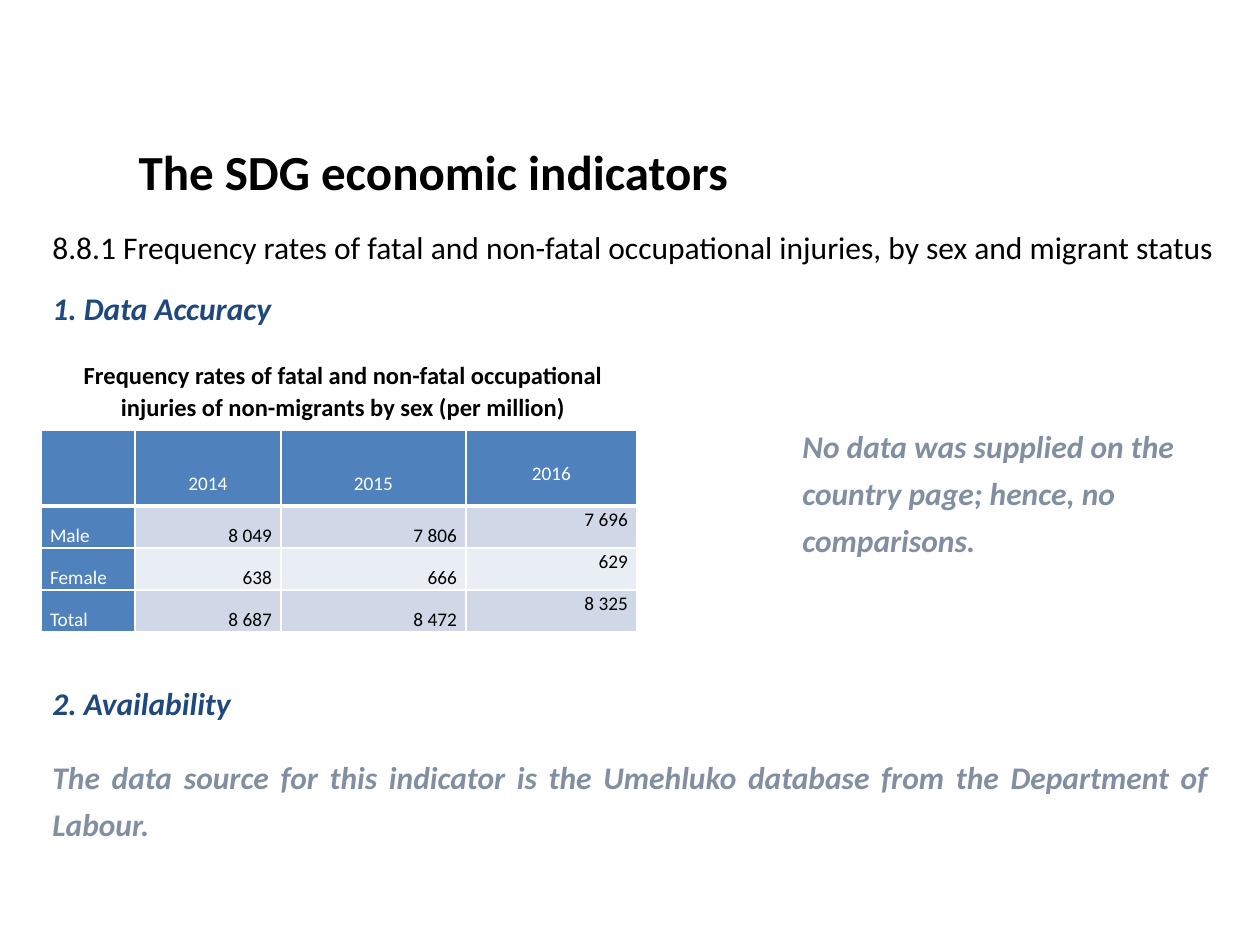
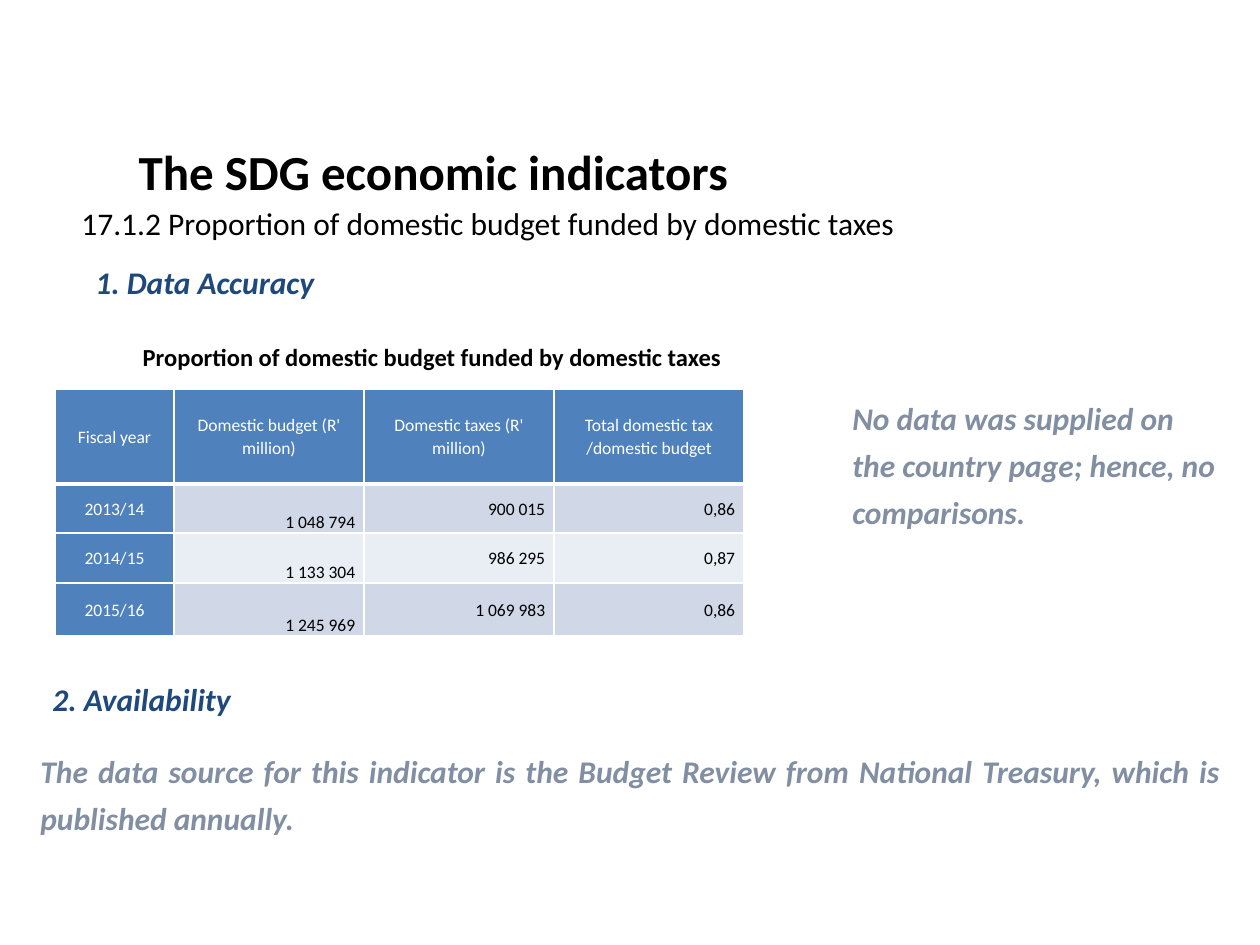
from dataclasses import dataclass

from lxml.etree import SubElement
from pptx import Presentation
from pptx.dml.color import RGBColor
from pptx.enum.text import MSO_ANCHOR, MSO_AUTO_SIZE, PP_ALIGN
from pptx.oxml.ns import qn
from pptx.util import Emu, Pt

PX = 914400 / 126


def px(length):
    """Turn whole pixels into EMU."""
    return Emu(round(length * PX))


@dataclass(frozen=True)
class TextStyle:
    """Look of one kind of text."""
    size: int
    color: str
    bold: bool = False
    italic: bool = False
    align: PP_ALIGN = PP_ALIGN.LEFT
    spacing: float = 1.0
    after: int = 0


class Theme:
    """Colours and type sizes shared by all slides."""
    font = "Calibri"
    black, white, navy, grey = "000000", "FFFFFF", "1F497D", "828FA3"
    header, bands = "4F81BD", ("D0D8E8", "E9EDF4")
    title = TextStyle(28, black, bold=True)
    indicator = TextStyle(18, black)
    heading = TextStyle(18, navy, bold=True, italic=True)
    remark = TextStyle(18, grey, bold=True, italic=True, spacing=1.25, after=12)
    source = TextStyle(18, grey, True, True, PP_ALIGN.JUSTIFY, 1.25, 12)
    caption = TextStyle(14, black, bold=True, align=PP_ALIGN.CENTER, spacing=1.07, after=8)


@dataclass(frozen=True)
class Column:
    """Width and text placement of one table column."""
    width: int
    align: PP_ALIGN = PP_ALIGN.RIGHT
    anchor: MSO_ANCHOR = MSO_ANCHOR.BOTTOM
    header_lift: int = 0


class IndicatorDeck:
    """Holds the theme and the current slide and draws each kind of element."""

    def __init__(self, theme):
        self.theme = theme
        self.deck = Presentation()
        self.deck.slide_width, self.deck.slide_height = px(1260), px(945)
        self.page = None

    def add_page(self, title):
        """Start a slide with the shared title."""
        self.page = self.deck.slides.add_slide(self.deck.slide_layouts[5])
        box = self.page.shapes.title
        box.left, box.top, box.width, box.height = map(px, (126, 135, 621, 72))
        self.fill_frame(box.text_frame, title, self.theme.title, wrap=False)

    def fill_frame(self, frame, text, style, wrap=True):
        """Fill a text frame with one styled paragraph."""
        frame.word_wrap = wrap
        frame.auto_size = MSO_AUTO_SIZE.SHAPE_TO_FIT_TEXT
        frame.vertical_anchor = MSO_ANCHOR.TOP
        self.add_span(frame.paragraphs[0], text, style)

    def add_span(self, para, text, style):
        """Format a paragraph and add its run."""
        para.alignment = style.align
        para.line_spacing = style.spacing
        para.space_before, para.space_after = Pt(0), Pt(style.after)
        span = para.add_run()
        span.text = text
        font = span.font
        font.name, font.size = self.theme.font, Pt(style.size)
        font.bold, font.italic = style.bold, style.italic
        font.color.rgb = RGBColor.from_string(style.color)

    def add_text(self, text, style, left, top, width, height=50):
        """Add a wrapping text box."""
        box = self.page.shapes.add_textbox(*map(px, (left, top, width, height)))
        self.fill_frame(box.text_frame, text, style)

    def add_table(self, left, top, columns, heights, rows, size):
        """Add a table with a header row, a header column and banded rows."""
        width = sum(column.width for column in columns)
        frame = self.page.shapes.add_table(
            len(rows), len(columns), *map(px, (left, top, width, sum(heights))))
        table = frame.table
        table.first_row = table.horz_banding = False
        for index, column in enumerate(columns):
            table.columns[index].width = px(column.width)
        for index, (height, texts) in enumerate(zip(heights, rows)):
            table.rows[index].height = px(height)
            for place, (column, text) in enumerate(zip(columns, texts)):
                self.fill_cell(table.cell(index, place), index, place, column, text, size)

    def fill_cell(self, cell, row, place, column, text, size):
        """Set the borders, fill, placement and text of a cell."""
        is_header = row == 0 or place == 0
        self.add_borders(cell, bottom=3 if row == 0 else 1)
        cell.fill.solid()
        color = self.theme.header if is_header else self.theme.bands[(row - 1) % 2]
        cell.fill.fore_color.rgb = RGBColor.from_string(color)
        cell.margin_left = cell.margin_right = px(9)
        cell.margin_top = cell.margin_bottom = 0
        align, cell.vertical_anchor = column.align, column.anchor
        if row == 0:
            align, cell.vertical_anchor = PP_ALIGN.CENTER, MSO_ANCHOR.MIDDLE
            if column.header_lift:
                cell.vertical_anchor = MSO_ANCHOR.BOTTOM
                cell.margin_bottom = px(column.header_lift)
        if text:
            ink = self.theme.white if is_header else self.theme.black
            style = TextStyle(size, ink, align=align, spacing=1.07)
            self.add_span(cell.text_frame.paragraphs[0], text, style)

    def add_borders(self, cell, bottom):
        """Draw white lines on all sides of a cell."""
        properties = cell._tc.get_or_add_tcPr()
        for side, width in (("L", 1), ("R", 1), ("T", 1), ("B", bottom)):
            line = SubElement(properties, qn(f"a:ln{side}"), w=str(Pt(width)))
            fill = SubElement(line, qn("a:solidFill"))
            SubElement(fill, qn("a:srgbClr"), val=self.theme.white)


def main():
    """Build both indicator slides."""
    theme = Theme()
    show = IndicatorDeck(theme)
    title = "The SDG economic indicators"
    accuracy, availability = "1. Data Accuracy", "2. Availability"
    no_data = "No data was supplied on the country page; hence, no comparisons."

    show.add_page(title)
    show.add_text("8.8.1 Frequency rates of fatal and non-fatal occupational injuries, "
                  "by sex and migrant status", theme.indicator, 40, 222, 1210)
    show.add_text(accuracy, theme.heading, 40, 283, 432)
    show.add_text("Frequency rates of fatal and non-fatal occupational injuries of "
                  "non-migrants by sex (per million)", theme.caption, 38, 352, 610, 77)
    show.add_table(
        41, 430,
        [Column(94, PP_ALIGN.LEFT), Column(146, header_lift=10),
         Column(185, header_lift=10),
         Column(171, anchor=MSO_ANCHOR.TOP, header_lift=20)],
        [76, 42, 42, 42],
        [("", "2014", "2015", "2016"),
         ("Male", "8 049", "7 806", "7 696"),
         ("Female", "638", "666", "629"),
         ("Total", "8 687", "8 472", "8 325")], 11)
    show.add_text(no_data, theme.remark, 790, 411, 432, 156)
    show.add_text(availability, theme.heading, 40, 678, 432)
    show.add_text("The data source for this indicator is the Umehluko database from the "
                  "Department of Labour.", theme.source, 40, 742, 1181, 108)

    show.add_page(title)
    show.add_text("17.1.2 Proportion of domestic budget funded by domestic taxes",
                  theme.indicator, 69, 198, 966)
    show.add_text(accuracy, theme.heading, 83, 257, 432)
    show.add_text("Proportion of domestic budget funded by domestic taxes",
                  theme.caption, 117, 334, 630, 53)
    ratio = Column(190, anchor=MSO_ANCHOR.MIDDLE)
    show.add_table(
        55, 389,
        [Column(119, PP_ALIGN.CENTER, MSO_ANCHOR.MIDDLE), Column(190), ratio, ratio],
        [95, 49, 50, 53],
        [("Fiscal year", "Domestic budget (R' million)", "Domestic taxes (R' million)",
          "Total domestic tax /domestic budget"),
         ("2013/14", "1 048 794", "900 015", "0,86"),
         ("2014/15", "1 133 304", "986 295", "0,87"),
         ("2015/16", "1 245 969", "1 069 983", "0,86")], 10)
    show.add_text(no_data, theme.remark, 840, 383, 389, 156)
    show.add_text(availability, theme.heading, 40, 674, 432)
    show.add_text("The data source for this indicator is the Budget Review from National "
                  "Treasury, which is published annually.", theme.source, 28, 736, 1205, 108)

    show.deck.save("out.pptx")


if __name__ == "__main__":
    main()
